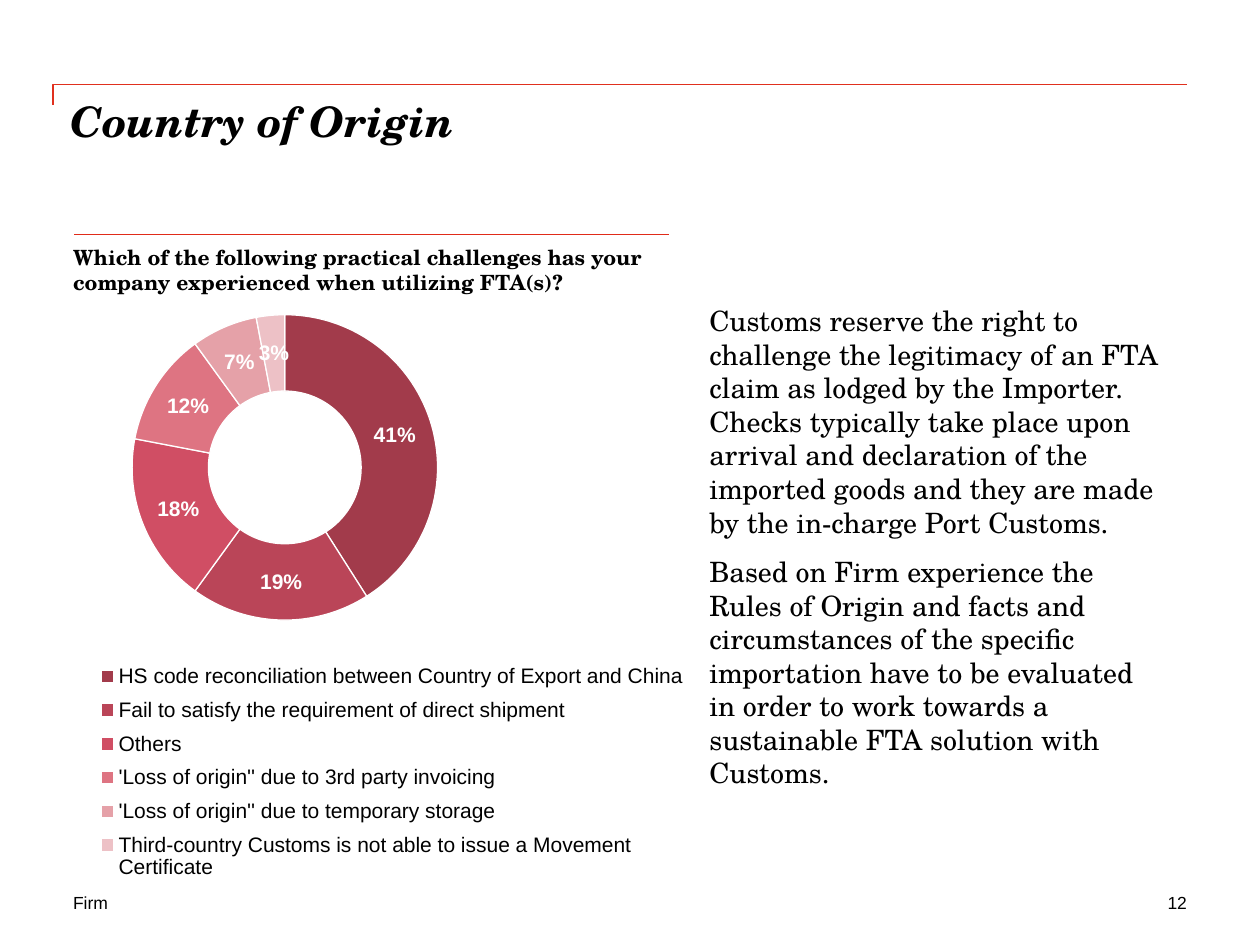
"""Builds the Country of Origin slide with a doughnut chart and commentary."""
from lxml.etree import SubElement
from pptx import Presentation
from pptx.chart.data import CategoryChartData
from pptx.dml.color import RGBColor
from pptx.enum.chart import XL_CHART_TYPE, XL_LEGEND_POSITION
from pptx.enum.shapes import MSO_CONNECTOR
from pptx.enum.text import PP_ALIGN
from pptx.oxml import parse_xml
from pptx.oxml.ns import nsdecls, qn
from pptx.util import Inches, Pt

BLACK = RGBColor(0x00, 0x00, 0x00)
WHITE = RGBColor(0xFF, 0xFF, 0xFF)
FRAME_RED = RGBColor(0xE0, 0x30, 0x1E)
RULE_RED = RGBColor(0xE0, 0x2B, 0x19)
SERIF, SANS = "TeX Gyre Schola", "Arial"

CHALLENGES = [
    ("HS code reconciliation between Country of Export and China", 41, RGBColor(0xA2, 0x3B, 0x4B)),
    ("Fail to satisfy the requirement of direct shipment", 19, RGBColor(0xBA, 0x45, 0x58)),
    ("Others", 18, RGBColor(0xD0, 0x4E, 0x64)),
    ("'Loss of origin'' due to 3rd party invoicing", 12, RGBColor(0xDE, 0x74, 0x82)),
    ("'Loss of origin'' due to temporary storage", 7, RGBColor(0xE5, 0xA1, 0xA8)),
    ("Third-country Customs is not able to issue a Movement Certificate", 3,
     RGBColor(0xED, 0xC1, 0xC6)),
]
COMMENTS = [
    "Customs reserve the right to challenge the legitimacy of an FTA claim as lodged by the "
    "Importer. Checks typically take place upon arrival and declaration of the imported goods "
    "and they are made by the in-charge Port Customs.",
    "Based on Firm experience the Rules of Origin and facts and circumstances of the specific "
    "importation have to be evaluated in order to work towards a sustainable FTA solution "
    "with Customs.",
]


def set_font(font, size, name=SANS, color=BLACK, bold=False, italic=False):
    font.size, font.name, font.bold, font.italic = Pt(size), name, bold, italic
    font.color.rgb = color


def add_text(s, box, texts, size, name=SANS, align=PP_ALIGN.LEFT, after=0, **style):
    tf = s.shapes.add_textbox(*map(Inches, box)).text_frame
    tf.word_wrap = True
    tf.margin_left = tf.margin_top = tf.margin_right = tf.margin_bottom = 0
    for i, text in enumerate(texts):
        p = tf.add_paragraph() if i else tf.paragraphs[0]
        p.text = text
        p.alignment = align
        p.space_after = Pt(after)
        set_font(p.font, size, name, **style)


def add_frame(s, points):
    start, *rest = [(Inches(x), Inches(y)) for x, y in points]
    fb = s.shapes.build_freeform(*start)
    fb.add_line_segments(rest, close=False)
    sp = fb.convert_to_shape()
    sp.shadow.inherit = False
    sp.fill.background()
    sp.line.color.rgb = FRAME_RED
    sp.line.width = Pt(1)


def add_rule(s, x1, x2, y):
    line = s.shapes.add_connector(
        MSO_CONNECTOR.STRAIGHT, Inches(x1), Inches(y), Inches(x2), Inches(y))
    line.line.color.rgb = RULE_RED
    line.line.width = Pt(0.75)
    SubElement(line._element.spPr, qn("a:effectLst"))


def set_layout(parent, index, x, y, w, h, target=""):
    for old in parent.findall(qn("c:layout")):
        parent.remove(old)
    parent.insert(index, parse_xml(
        f'<c:layout {nsdecls("c")}><c:manualLayout>{target}'
        '<c:xMode val="edge"/><c:yMode val="edge"/>'
        f'<c:x val="{x}"/><c:y val="{y}"/><c:w val="{w}"/><c:h val="{h}"/>'
        '</c:manualLayout></c:layout>'))


def add_doughnut(s, box):
    names, values, colors = zip(*CHALLENGES)
    data = CategoryChartData()
    data.categories = names
    data.add_series("Series 1", values)
    chart = s.shapes.add_chart(XL_CHART_TYPE.DOUGHNUT, *map(Inches, box), data).chart
    chart.has_title = False
    set_font(chart.font, 18)
    chart.has_legend = True
    legend = chart.legend
    legend.position = XL_LEGEND_POSITION.TOP
    legend.include_in_layout = False
    set_font(legend.font, 12)
    set_layout(legend._element, 1, 0.02, 0.61, 0.54, 0.36)
    set_layout(chart._chartSpace.chart.plotArea, 0, 0.06, 0.08, 0.27, 0.49,
               '<c:layoutTarget val="inner"/>')

    plot = chart.plots[0]
    plot.vary_by_categories = True
    plot.has_data_labels = True
    labels = plot.data_labels
    labels.show_percentage = True
    labels.show_value = False
    labels.number_format = "0%"
    labels.number_format_is_linked = False
    set_font(labels.font, 12, color=WHITE, bold=True)
    for i, color in enumerate(colors):
        point = plot.series[0].points[i].format
        point.fill.solid()
        point.fill.fore_color.rgb = color
        point.line.color.rgb = WHITE
        point.line.width = Pt(0.75)


def main():
    prs = Presentation()
    prs.slide_width, prs.slide_height = Inches(10), Inches(7.5)
    s = prs.slides.add_slide(prs.slide_layouts[6])
    add_text(s, (0.58, 7.08, 2.83, 0.17), ["Firm"], 10)
    add_frame(s, [(0.42, 0.83), (0.42, 0.67), (9.42, 0.67)])
    add_text(s, (0.58, 1.94, 4.65, 0.63),
             ["Which of the following practical challenges has your company experienced "
              "when utilizing FTA(s)?"], 12, SERIF, bold=True)
    add_text(s, (7.75, 7.08, 1.67, 0.17), ["12"], 10, align=PP_ALIGN.RIGHT)
    add_doughnut(s, (0.51, 2.02, 8.98, 5.2))
    add_rule(s, 0.59, 5.31, 1.86)
    add_text(s, (5.63, 2.41, 3.62, 3.86), COMMENTS, 16, SERIF, after=9)
    add_text(s, (0.56, 0.76, 8.83, 1), ["Country of Origin"], 24, SERIF, bold=True, italic=True)
    prs.save("out.pptx")


if __name__ == "__main__":
    main()
